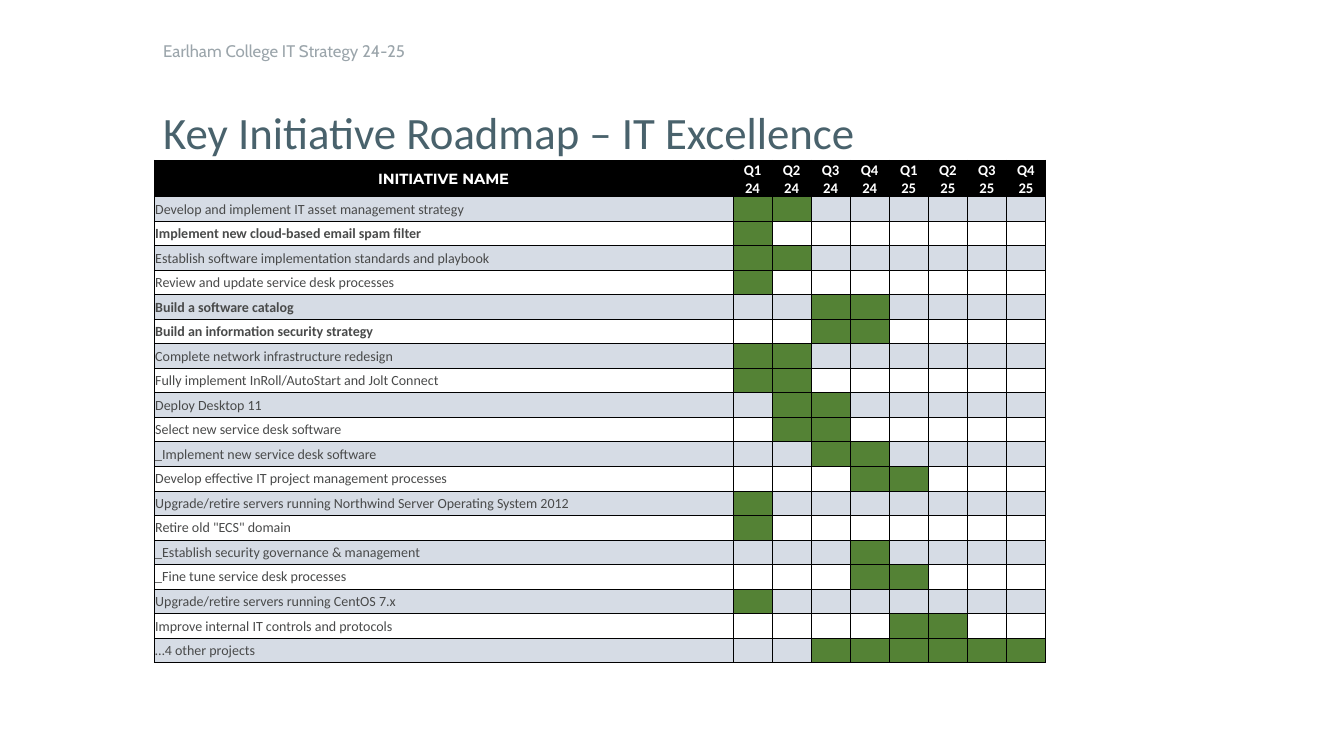
from dataclasses import dataclass

import pptx
import pptx.dml.color
import pptx.enum.text
import pptx.oxml
import pptx.oxml.ns
import pptx.table
import pptx.text.text
import pptx.util
from pptx.util import Inches

BLACK = "000000"
WHITE = "FFFFFF"
BAND = "D6DCE5"
ACTIVE = "548235"
BODY_TEXT = "494A4A"

TABLE_LEFT, TABLE_TOP = 1.53, 1.59
TABLE_WIDTH, TABLE_HEIGHT = 8.84, 4.99
NAME_WIDTH, HEADER_HEIGHT = 5.74, 0.36
QUARTERS = [f"Q{quarter}\n{year}" for year in (24, 25) for quarter in range(1, 5)]


@dataclass(frozen=True)
class Style:
    size: float
    color: str
    font: str = "Calibri"
    bold: bool = False
    centered: bool = False


@dataclass(frozen=True)
class Heading:
    text: str
    left: float
    top: float
    width: float
    height: float
    style: Style


@dataclass(frozen=True)
class Initiative:
    """A roadmap row, active from quarter first to quarter last (1 to 8)."""
    name: str
    first: int
    last: int
    bold: bool = False


HEADINGS = [
    Heading("Key Initiative Roadmap – IT Excellence", 1.52, 1.05, 9.59, 0.53,
            Style(32, "49626C")),
    Heading("Earlham College IT Strategy 24-25", 1.52, 0.38, 3.79, 0.26,
            Style(12, "9BA5AB", "Cabin")),
]

INITIATIVES = [
    Initiative("Develop and implement IT asset management strategy", 1, 2),
    Initiative("Implement new cloud-based email spam filter", 1, 1, bold=True),
    Initiative("Establish software implementation standards and playbook", 1, 2),
    Initiative("Review and update service desk processes", 1, 1),
    Initiative("Build a software catalog", 3, 4, bold=True),
    Initiative("Build an information security strategy", 3, 4, bold=True),
    Initiative("Complete network infrastructure redesign", 1, 2),
    Initiative("Fully implement InRoll/AutoStart and Jolt Connect", 1, 2),
    Initiative("Deploy Desktop 11", 2, 3),
    Initiative("Select new service desk software", 2, 3),
    Initiative("_Implement new service desk software", 3, 4),
    Initiative("Develop effective IT project management processes", 4, 5),
    Initiative("Upgrade/retire servers running Northwind Server Operating System 2012", 1, 1),
    Initiative('Retire old "ECS" domain', 1, 1),
    Initiative("_Establish security governance & management", 4, 4),
    Initiative("_Fine tune service desk processes", 4, 5),
    Initiative("Upgrade/retire servers running CentOS 7.x", 1, 1),
    Initiative("Improve internal IT controls and protocols", 5, 6),
    Initiative("…4 other projects", 3, 8),
]


def rgb(color: str) -> pptx.dml.color.RGBColor:
    return pptx.dml.color.RGBColor.from_string(color)


def write(frame: pptx.text.text.TextFrame, text: str, style: Style,
          line_spacing: float = 1.0) -> None:
    frame.text = text
    for paragraph in frame.paragraphs:
        paragraph.line_spacing = line_spacing
        if style.centered:
            paragraph.alignment = pptx.enum.text.PP_ALIGN.CENTER
        paragraph.font.name = style.font
        paragraph.font.size = pptx.util.Pt(style.size)
        paragraph.font.bold = style.bold
        paragraph.font.color.rgb = rgb(style.color)


def add_heading(slide: pptx.slide.Slide, heading: Heading) -> None:
    box = slide.shapes.add_textbox(Inches(heading.left), Inches(heading.top),
                                   Inches(heading.width), Inches(heading.height))
    box.text_frame.word_wrap = True
    write(box.text_frame, heading.text, heading.style, line_spacing=0.9)


def format_cell(cell: pptx.table._Cell, fill: str) -> None:
    """Set margins, anchor, black half-point borders and fill."""
    cell.margin_left = cell.margin_right = cell.margin_top = Inches(0.01)
    cell.margin_bottom = 0
    cell.vertical_anchor = pptx.enum.text.MSO_ANCHOR.MIDDLE
    properties = cell._tc.get_or_add_tcPr()
    for side in ("lnL", "lnR", "lnT", "lnB"):
        properties.append(pptx.oxml.parse_xml(
            f'<a:{side} {pptx.oxml.ns.nsdecls("a")} w="{pptx.util.Pt(0.5)}">'
            f'<a:solidFill><a:srgbClr val="{BLACK}"/></a:solidFill></a:{side}>'))
    cell.fill.solid()
    cell.fill.fore_color.rgb = rgb(fill)


def shrink_empty(cell: pptx.table._Cell) -> None:
    """Give an empty cell a small font so that it does not stretch its row."""
    cell.text_frame.paragraphs[0]._p.append(pptx.oxml.parse_xml(
        f'<a:endParaRPr {pptx.oxml.ns.nsdecls("a")} sz="1000"/>'))


def add_roadmap(slide: pptx.slide.Slide) -> None:
    roadmap = slide.shapes.add_table(
        len(INITIATIVES) + 1, len(QUARTERS) + 1, Inches(TABLE_LEFT), Inches(TABLE_TOP),
        Inches(TABLE_WIDTH), Inches(TABLE_HEIGHT)).table
    roadmap.horz_banding = False

    quarter_width = (TABLE_WIDTH - NAME_WIDTH) / len(QUARTERS)
    for index, column in enumerate(roadmap.columns):
        column.width = Inches(quarter_width if index else NAME_WIDTH)
    row_height = (TABLE_HEIGHT - HEADER_HEIGHT) / len(INITIATIVES)
    for index, row in enumerate(roadmap.rows):
        row.height = Inches(row_height if index else HEADER_HEIGHT)

    for column, label in enumerate(["INITIATIVE NAME", *QUARTERS]):
        header = roadmap.cell(0, column)
        format_cell(header, BLACK)
        font = "Calibri" if column else "Montserrat"
        write(header.text_frame, label, Style(10.5, WHITE, font, bold=True, centered=True))

    for row, initiative in enumerate(INITIATIVES, start=1):
        band = BAND if row % 2 else WHITE
        name = roadmap.cell(row, 0)
        format_cell(name, band)
        write(name.text_frame, initiative.name, Style(10, BODY_TEXT, bold=initiative.bold))
        for quarter in range(1, len(QUARTERS) + 1):
            active = initiative.first <= quarter <= initiative.last
            square = roadmap.cell(row, quarter)
            format_cell(square, ACTIVE if active else band)
            shrink_empty(square)


def main() -> None:
    presentation = pptx.Presentation()
    presentation.slide_width = Inches(13.33)
    presentation.slide_height = Inches(7.5)
    slide = presentation.slides.add_slide(presentation.slide_layouts[6])
    for heading in HEADINGS:
        add_heading(slide, heading)
    add_roadmap(slide)
    presentation.save("out.pptx")


if __name__ == "__main__":
    main()
